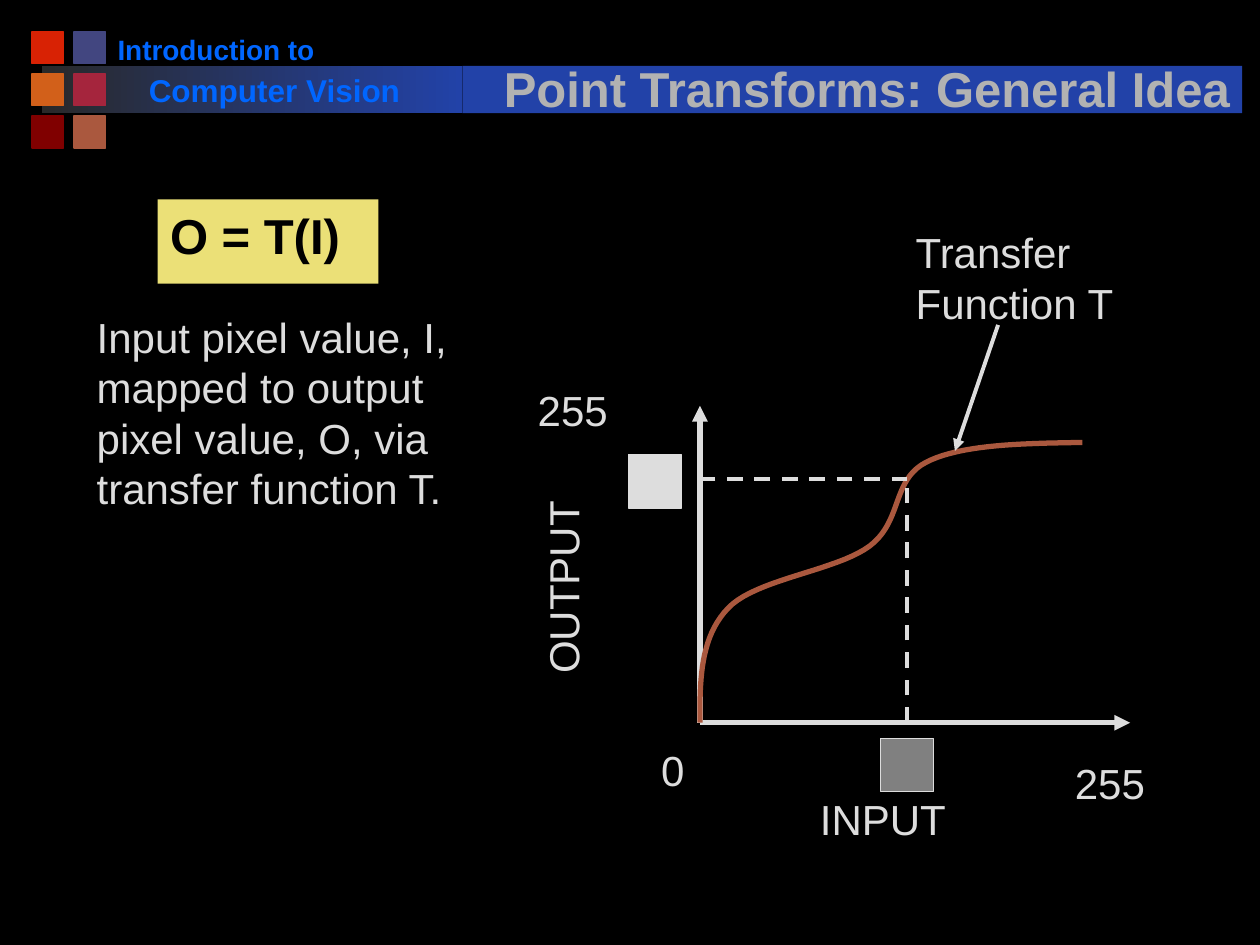
from lxml.etree import SubElement
from pptx import Presentation
from pptx.dml.color import RGBColor
from pptx.enum.dml import MSO_LINE
from pptx.enum.shapes import MSO_CONNECTOR, MSO_SHAPE
from pptx.enum.text import MSO_ANCHOR, PP_ALIGN
from pptx.oxml import parse_xml
from pptx.oxml.ns import nsdecls, qn
from pptx.util import Cm, Pt

LIGHT, BLUE, RUST = "DDDDDD", "2242A8", "AA583E"

# All lengths in cm
TITLE = "Point Transforms: General Idea"
COURSE = [("Introduction to", 16, (2.12, 0.53, 4.5, 0.94)),
          ("Computer Vision", 18, (2.75, 1.3, 6.43, 1.02))]
LOGO_ROWS = [("D82204", "424680"), ("D2601A", "A5253D"), ("800000", RUST)]
LOGO_START, LOGO_SIDE, LOGO_PITCH = 0.64, 0.64, 0.85

FORMULA = "O = T(I)"
EXPLANATION = ("Input pixel value, I, mapped to output pixel value, O, "
               "via transfer function T.")

ORIGIN = (14.11, 14.57)
AXIS_TOP, AXIS_RIGHT = 8.18, 22.78
SAMPLE = (18.29, 9.65)
CURVE = [  # two control points and an end point for each piece
    ((14.11, 13.72), (14.11, 12.85), (14.68, 12.26)),
    ((15.24, 11.67), (16.86, 11.51), (17.53, 11.01)),
    ((18.2, 10.51), (17.97, 9.68), (18.67, 9.32)),
    ((19.37, 8.96), (20.6, 8.94), (21.82, 8.92)),
]
CURVE_STEPS = 20
LABELS = [  # lines, box, rotation
    (["0"], (13.08, 14.89, 0.99, 1.27), 0),
    (["255"], (21.42, 15.14, 1.93, 1.27), 0),
    (["255"], (10.59, 7.62, 1.93, 1.27), 0),
    (["INPUT"], (16.28, 15.88, 3.05, 1.27), 0),
    (["OUTPUT"], (9.35, 11.2, 3.99, 1.27), 270),
    (["Transfer", "Function T"], (18.21, 4.45, 4.52, 2.29), 0),
]
PIXELS = [("808080", (17.75, 14.89, 1.07, 1.07)),
          (LIGHT, (12.67, 9.17, 1.07, 1.07))]
POINTER = ((20.12, 6.55), (19.25, 9.09))


def rgb(color):
    return RGBColor.from_string(color)


def lengths(values):
    return [Cm(v) for v in values]


def add_rect(s, box, fill, line=None, width=1):
    sp = s.shapes.add_shape(MSO_SHAPE.RECTANGLE, *lengths(box))
    sp.shadow.inherit = False
    sp.fill.solid()
    sp.fill.fore_color.rgb = rgb(fill)
    if line:
        sp.line.color.rgb = rgb(line)
        sp.line.width = Pt(width)
    else:
        sp.line.fill.background()
    return sp


def write(sp, lines, size, color, bold=False, wrap=False,
          align=PP_ALIGN.LEFT, anchor=MSO_ANCHOR.TOP):
    tf = sp.text_frame
    tf.word_wrap = wrap
    tf.vertical_anchor = anchor
    for i, line in enumerate(lines):
        p = tf.paragraphs[0] if i == 0 else tf.add_paragraph()
        p.alignment = align
        r = p.add_run()
        r.text = line
        r.font.name = "Arial"
        r.font.size = Pt(size)
        r.font.bold = bold
        r.font.color.rgb = rgb(color)
    return tf


def add_text(s, box, *args, **kwargs):
    sp = s.shapes.add_textbox(*lengths(box))
    write(sp, *args, **kwargs)
    return sp


def add_line(s, start, end, width, arrow=False, dashed=False):
    c = s.shapes.add_connector(MSO_CONNECTOR.STRAIGHT, *lengths(start + end))
    c.line.color.rgb = rgb(LIGHT)
    c.line.width = Pt(width)
    if dashed:
        c.line.dash_style = MSO_LINE.DASH
    if arrow:
        SubElement(c.line._get_or_add_ln(), qn("a:tailEnd"), type="triangle")
    SubElement(c._element.spPr, qn("a:effectLst"))


def add_text_shadow(r):
    shadow = parse_xml(
        f'<a:effectLst {nsdecls("a")}><a:outerShdw dist="35921" dir="2700000">'
        '<a:srgbClr val="000000"/></a:outerShdw></a:effectLst>')
    r.font._element.find(qn("a:solidFill")).addnext(shadow)


def curve_points():
    """Sample the Bézier pieces of the transfer curve."""
    points, p0 = [], ORIGIN
    for p1, p2, p3 in CURVE:
        for i in range(1, CURVE_STEPS + 1):
            t = i / CURVE_STEPS
            u = 1 - t
            points.append(tuple(
                u**3 * a + 3 * u * u * t * b + 3 * u * t * t * c + t**3 * d
                for a, b, c, d in zip(p0, p1, p2, p3)))
        p0 = p3
    return points


def add_header(s):
    fade = add_rect(s, (0.85, 1.33, 8.47, 0.95), BLUE)
    fade.fill.gradient()
    fade.fill.gradient_angle = 0
    for stop, (position, color) in zip(fade.fill.gradient_stops,
                                       [(0, "292929"), (1, BLUE)]):
        stop.position = position
        stop.color.rgb = rgb(color)
    for row, colors in enumerate(LOGO_ROWS):
        for col, color in enumerate(colors):
            add_rect(s, (LOGO_START + col * LOGO_PITCH,
                         LOGO_START + row * LOGO_PITCH,
                         LOGO_SIDE, LOGO_SIDE), color, color)
    for text, size, box in COURSE:
        add_text(s, box, [text], size, "0066FF", bold=True)
    add_rect(s, (9.32, 1.33, 15.72, 0.95), BLUE)
    title = add_text(s, (9.32, 0.79, 16.31, 1.7), [TITLE], 28, "B2B2B2",
                     bold=True, wrap=True, align=PP_ALIGN.CENTER,
                     anchor=MSO_ANCHOR.BOTTOM)
    add_text_shadow(title.text_frame.paragraphs[0].runs[0])


def add_graph(s):
    add_line(s, ORIGIN, (ORIGIN[0], AXIS_TOP), 3, arrow=True)
    add_line(s, ORIGIN, (AXIS_RIGHT, ORIGIN[1]), 3, arrow=True)
    builder = s.shapes.build_freeform(*lengths(ORIGIN))
    builder.add_line_segments([lengths(p) for p in curve_points()], close=False)
    curve = builder.convert_to_shape()
    curve.shadow.inherit = False
    curve.fill.background()
    curve.line.color.rgb = rgb(RUST)
    curve.line.width = Pt(3)
    for lines, box, rotation in LABELS:
        add_text(s, box, lines, 24, LIGHT).rotation = rotation
    add_line(s, (SAMPLE[0], ORIGIN[1]), SAMPLE, 2.25, dashed=True)
    add_line(s, SAMPLE, (ORIGIN[0], SAMPLE[1]), 2.25, dashed=True)
    for fill, box in PIXELS:
        add_rect(s, box, fill, LIGHT, 0.75)
    add_line(s, *POINTER, 2.25, arrow=True)


def main():
    prs = Presentation()
    prs.slide_width, prs.slide_height = Cm(25.4), Cm(19.05)
    s = prs.slides.add_slide(prs.slide_layouts[6])
    s.background.fill.solid()
    s.background.fill.fore_color.rgb = rgb("000000")
    add_header(s)
    formula = add_rect(s, (3.18, 4.02, 4.45, 1.7), "EBE077")
    tf = write(formula, [FORMULA], 28, "000000", bold=True, wrap=True)
    tf.paragraphs[0].space_before = Pt(3)
    add_text(s, (1.7, 6.15, 8.47, 4.32), [EXPLANATION], 24, LIGHT, wrap=True)
    add_graph(s)
    prs.save("out.pptx")


if __name__ == "__main__":
    main()
